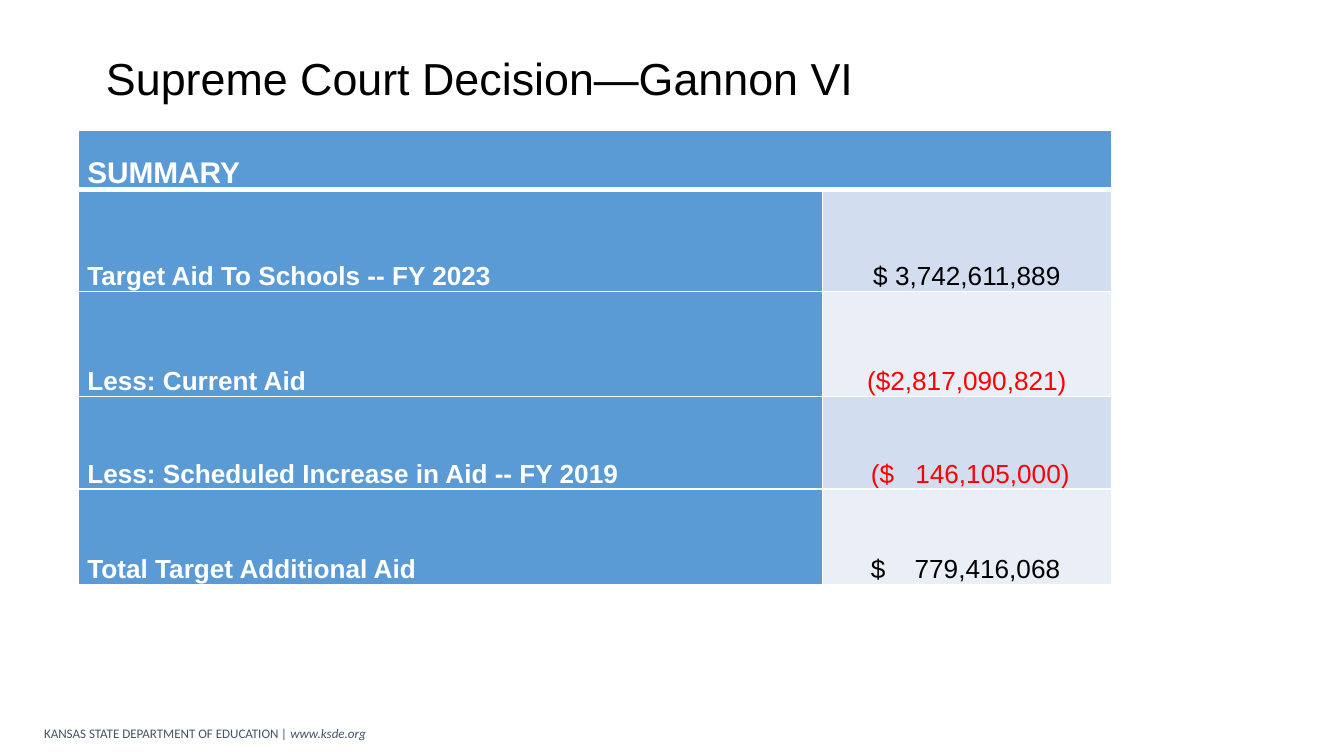
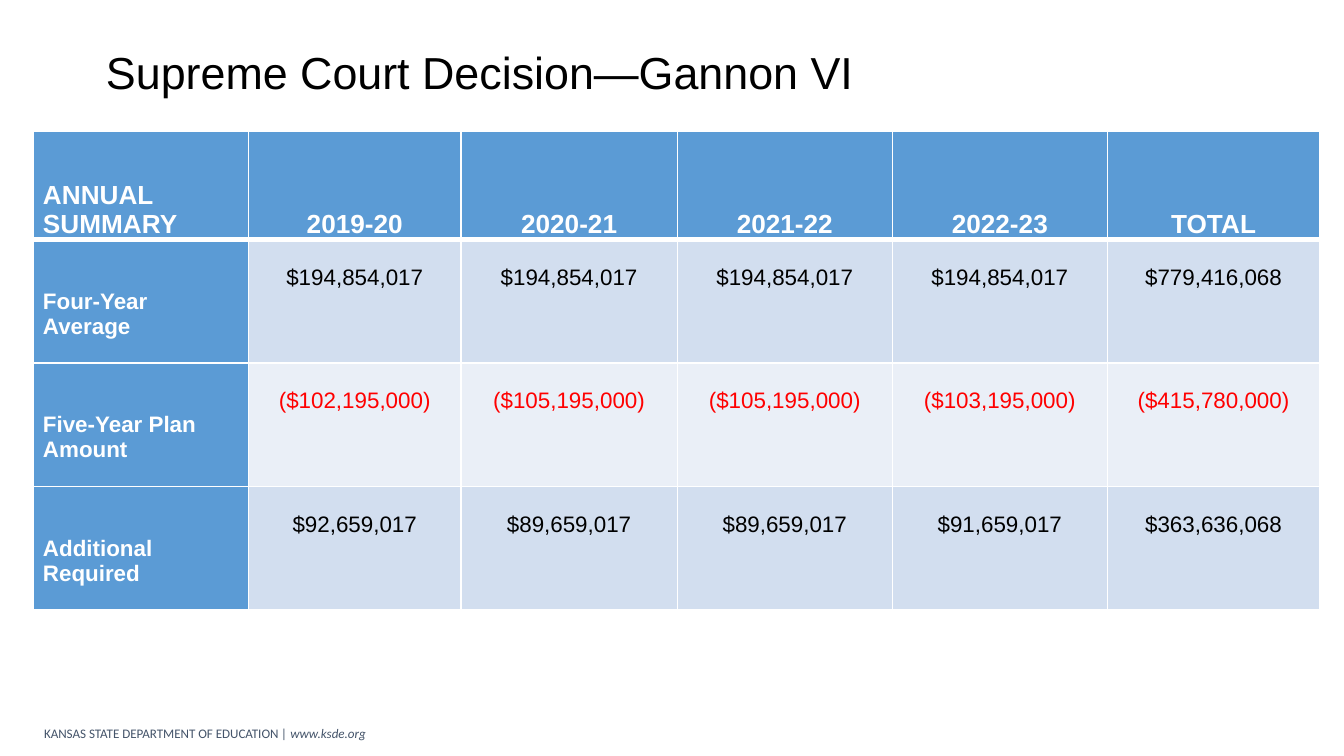
from dataclasses import dataclass

from lxml.etree import SubElement
from pptx import Presentation
from pptx.dml.color import RGBColor as RGB
from pptx.enum.text import MSO_ANCHOR as ANCHOR, MSO_AUTO_SIZE as AUTO, PP_ALIGN as ALIGN
from pptx.oxml.ns import qn
from pptx.util import Inches, Pt


@dataclass(frozen=True)
class Theme:
    font: str = "Arial"
    footer_font: str = "Calibri"
    text: str = "000000"
    white: str = "FFFFFF"
    negative: str = "FF0000"
    footer: str = "44546A"
    head: str = "5B9BD5"
    bands: tuple = ("D2DEEF", "EAEFF7")
    title_size: int = 24
    summary_size: int = 16
    large_size: int = 14
    small_size: int = 12
    footer_size: int = 7
    line: int = 1
    head_line: int = 3


THEME = Theme()
TITLE = "Supreme Court Decision—Gannon VI"

SUMMARY = [
    ["SUMMARY", ""],
    ["Target Aid To Schools -- FY 2023", "$ 3,742,611,889"],
    ["Less: Current Aid", "($2,817,090,821)"],
    ["Less: Scheduled Increase in Aid -- FY 2019", "($\t146,105,000)"],
    ["Total Target Additional Aid", "$\t779,416,068"],
]

ANNUAL = [
    ["ANNUAL SUMMARY", "2019-20", "2020-21", "2021-22", "2022-23", "TOTAL"],
    ["Four-Year Average"] + ["$194,854,017"] * 4 + ["$779,416,068"],
    ["Five-Year Plan Amount", "($102,195,000)", "($105,195,000)",
     "($105,195,000)", "($103,195,000)", "($415,780,000)"],
    ["Additional Required", "$92,659,017", "$89,659,017",
     "$89,659,017", "$91,659,017", "$363,636,068"],
]


def style(font, size, color, name=THEME.font, bold=False):
    font.name, font.size, font.bold = name, Pt(size), bold
    font.color.rgb = RGB.from_string(color)


def add_box(slide, left, top, width, height, anchor, wrap=True):
    tf = slide.shapes.add_textbox(*map(Inches, (left, top, width, height))).text_frame
    tf.word_wrap = wrap
    tf.vertical_anchor = anchor
    return tf


def add_title(slide, height):
    p = add_box(slide, 0.69, 0.3, 8.62, height, ANCHOR.MIDDLE).paragraphs[0]
    p.text = TITLE
    p.line_spacing = 0.9
    style(p.font, THEME.title_size, THEME.text)


def add_footer(slide):
    tf = add_box(slide, 0.23, 5.34, 3.1, 0.22, ANCHOR.BOTTOM, wrap=False)
    tf.auto_size = AUTO.SHAPE_TO_FIT_TEXT
    p = tf.paragraphs[0]
    p.add_run().text = "KANSAS STATE DEPARTMENT OF EDUCATION "
    r = p.add_run()
    r.text = "| www.ksde.org"
    r.font.italic = True
    style(p.font, THEME.footer_size, THEME.footer, THEME.footer_font)


def add_borders(cell, is_head):
    tc_pr = cell._tc.get_or_add_tcPr()
    for index, side in enumerate(("lnL", "lnR", "lnT", "lnB")):
        width = THEME.head_line if is_head and side == "lnB" else THEME.line
        ln = tc_pr.makeelement(qn(f"a:{side}"), {"w": str(Pt(width))})
        fill = SubElement(ln, qn("a:solidFill"))
        SubElement(fill, qn("a:srgbClr"), val=THEME.white)
        tc_pr.insert(index, ln)


def add_right_tab(p, position):
    tabs = SubElement(p._p.get_or_add_pPr(), qn("a:tabLst"))
    SubElement(tabs, qn("a:tab"), pos=str(Inches(position)), algn="r")


def fill_cell(cell, text, row, col, size, anchor, top):
    is_label = row == 0 or col == 0
    is_negative = text.startswith("(")
    cell.fill.solid()
    fill = THEME.head if is_label else THEME.bands[(row - 1) % 2]
    cell.fill.fore_color.rgb = RGB.from_string(fill)
    add_borders(cell, row == 0)
    cell.vertical_anchor = anchor
    cell.margin_left = cell.margin_right = Inches(0.07)
    cell.margin_top, cell.margin_bottom = Inches(top), 0
    p = cell.text_frame.paragraphs[0]
    p.text = text
    if "\t" in text:
        cell.margin_left = Inches(0.36)
        add_right_tab(p, 1.48 if is_negative else 1.41)
    elif col > 0:
        p.alignment = ALIGN.CENTER
    color = THEME.white if is_label else THEME.negative if is_negative else THEME.text
    style(p.font, size, color, bold=is_label)


def add_table(slide, data, left, top, widths, heights, head_size, body_size,
              label_anchor=ANCHOR.BOTTOM, value_anchor=ANCHOR.BOTTOM, body_top=0):
    frame = slide.shapes.add_table(
        len(data), len(widths), Inches(left), Inches(top),
        Inches(sum(widths)), Inches(sum(heights)))
    table = frame.table
    table.first_col = True
    for column, width in zip(table.columns, widths):
        column.width = Inches(width)
    for row, height in zip(table.rows, heights):
        row.height = Inches(height)
    for i, values in enumerate(data):
        for j, text in enumerate(values):
            cell = table.cell(i, j)
            if i == 0:
                fill_cell(cell, text, i, j, head_size, ANCHOR.BOTTOM, 0)
            else:
                anchor = value_anchor if j else label_anchor
                fill_cell(cell, text, i, j, body_size, anchor, body_top)
    return table


def add_slide(prs, title_height):
    slide = prs.slides.add_slide(prs.slide_layouts[6])
    add_footer(slide)
    add_title(slide, title_height)
    return slide


def main():
    prs = Presentation()
    prs.slide_width = Inches(10)
    prs.slide_height = prs.slide_width * 9 // 16

    slide = add_slide(prs, 0.6)
    table = add_table(slide, SUMMARY, 0.58, 0.97, [5.54, 2.15],
                      [0.44, 0.76, 0.78, 0.69, 0.71],
                      THEME.summary_size, THEME.large_size)
    table.cell(0, 0).merge(table.cell(0, 1))

    slide = add_slide(prs, 0.51)
    add_table(slide, ANNUAL, 0.25, 0.98, [1.6, 1.58, 1.61, 1.6, 1.6, 1.58],
              [0.8] + [0.92] * 3, THEME.large_size, THEME.small_size,
              ANCHOR.MIDDLE, ANCHOR.TOP, 0.19)

    prs.save("out.pptx")


if __name__ == "__main__":
    main()
